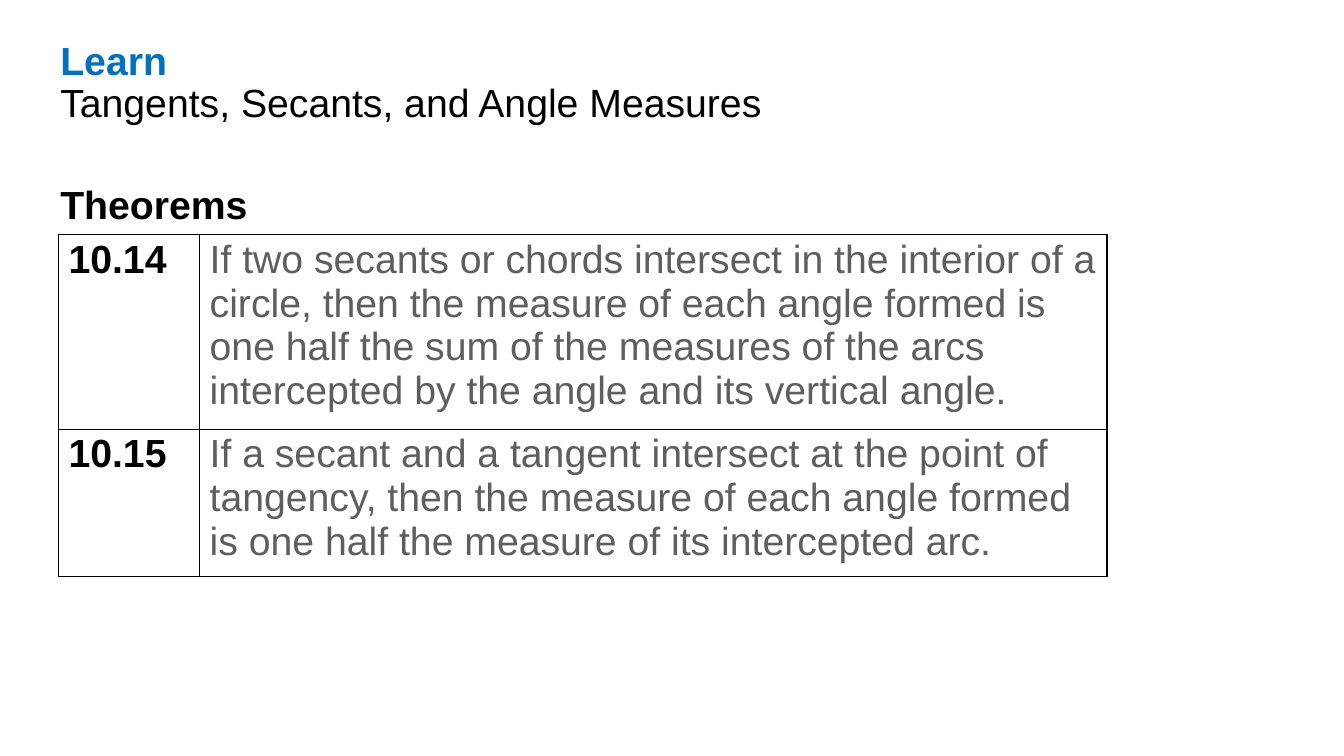
from lxml import etree
from pptx import Presentation
from pptx.dml.color import RGBColor
from pptx.enum.text import MSO_ANCHOR
from pptx.oxml.ns import qn
from pptx.util import Pt

PX = 9144
TOP = MSO_ANCHOR.TOP
MIDDLE = MSO_ANCHOR.MIDDLE
FONT = "Arial"
TEXT_SIZE = 28
COLORS = {"blue": "0070C0", "black": "000000", "gray": "5E5E5E", "white": "FFFFFF"}
THEOREMS = [
    ("10.14", "If two secants or chords intersect in the interior of a circle, "
              "then the measure of each angle formed is one half the sum of the "
              "measures of the arcs intercepted by the angle and its vertical angle."),
    ("10.15", "If a secant and a tangent intersect at the point of tangency, "
              "then the measure of each angle formed is one half the measure of "
              "its intercepted arc."),
]


def px(*lengths):
    return [length * PX for length in lengths]


def rgb(name):
    return RGBColor.from_string(COLORS[name])


def add_span(para, text, color, bold):
    span = para.add_run()
    span.text = text
    span.font.name = FONT
    span.font.size = Pt(TEXT_SIZE)
    span.font.bold = bold
    span.font.color.rgb = rgb(color)


def add_text(page, place, lines, anchor, spacing):
    frame = page.shapes.add_textbox(*px(*place)).text_frame
    frame.word_wrap = True
    frame.vertical_anchor = anchor
    for index, line in enumerate(lines):
        para = frame.add_paragraph() if index else frame.paragraphs[0]
        para.line_spacing = spacing
        add_span(para, *line)


def add_borders(cell):
    properties = cell._tc.get_or_add_tcPr()
    for position, side in enumerate(("lnL", "lnR", "lnT", "lnB")):
        border = etree.Element(qn(f"a:{side}"), w=str(Pt(1)))
        fill = etree.SubElement(border, qn("a:solidFill"))
        etree.SubElement(fill, qn("a:srgbClr"), val=COLORS["black"])
        properties.insert(position, border)


def fill_cell(cell, text, color, bold):
    cell.margin_left, cell.margin_right = px(10, 10)
    cell.margin_top, cell.margin_bottom = px(3, 3)
    cell.vertical_anchor = TOP
    cell.fill.solid()
    cell.fill.fore_color.rgb = rgb("white")
    add_borders(cell)
    add_span(cell.text_frame.paragraphs[0], text, color, bold)


def add_theorem_table(page, left, top, widths, row_height):
    place = px(left, top, sum(widths), row_height * len(THEOREMS))
    table = page.shapes.add_table(len(THEOREMS), len(widths), *place).table
    table.first_row = False
    table.horz_banding = False
    for column, width in zip(table.columns, px(*widths)):
        column.width = width
    for row, (number, statement) in zip(table.rows, THEOREMS):
        fill_cell(row.cells[0], number, "black", True)
        fill_cell(row.cells[1], statement, "gray", False)


def main():
    deck = Presentation()
    deck.slide_width, deck.slide_height = px(1333, 750)
    page = deck.slides.add_slide(deck.slide_layouts[6])
    title = [("Learn", "blue", True),
             ("Tangents, Secants, and Angle Measures", "black", False)]
    add_text(page, (50, 36, 851, 86), title, TOP, 0.9)
    add_text(page, (50, 170, 237, 64), [("Theorems", "black", True)], MIDDLE, 1.0)
    add_theorem_table(page, 58, 233, (140, 900), 125)
    deck.save("out.pptx")


if __name__ == "__main__":
    main()
